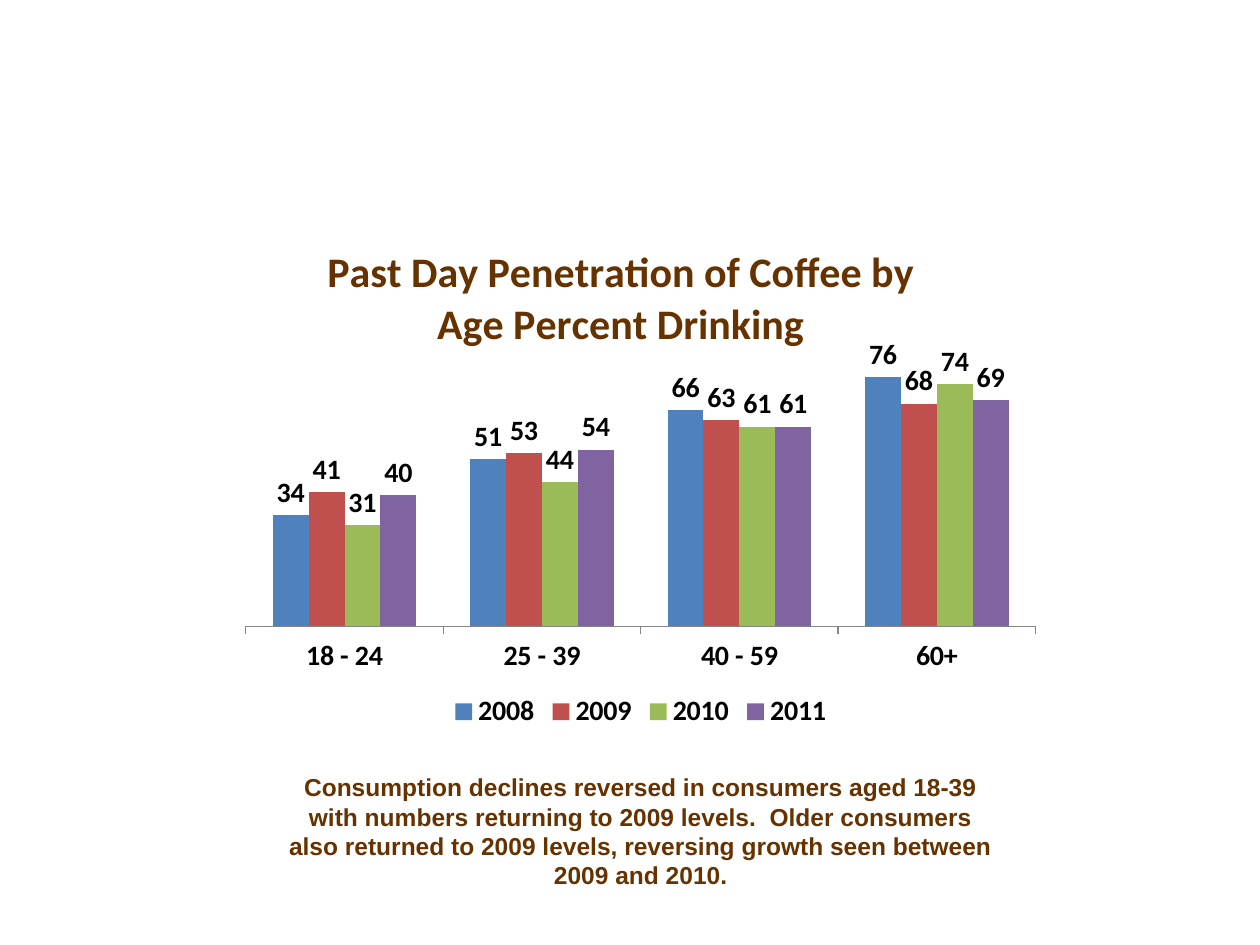
from lxml import etree
from pptx import Presentation
from pptx.chart.data import CategoryChartData
from pptx.dml.color import RGBColor
from pptx.enum import chart as chart_enum, text as text_enum
from pptx.oxml import ns
from pptx.util import Inches, Pt

COLORS = {
    "brown": "663300",
    "black": "000000",
    "axis": "868686",
    "2008": "4F81BD",
    "2009": "C0504D",
    "2010": "9BBB59",
    "2011": "8064A2",
}
AGE_GROUPS = ["18 - 24", "25 - 39", "40 - 59", "60+"]
PERCENT_DRINKING = {
    "2008": [34, 51, 66, 76],
    "2009": [41, 53, 63, 68],
    "2010": [31, 44, 61, 74],
    "2011": [40, 54, 61, 69],
}
TITLE = "Past Day Penetration of Coffee by Age Percent Drinking"
COMMENT = (
    "Consumption declines reversed in consumers aged 18-39 with numbers "
    "returning to 2009 levels.  Older consumers also returned to 2009 levels, "
    "reversing growth seen between 2009 and 2010."
)


def color(name):
    return RGBColor.from_string(COLORS[name])


def format_font(font, size, name="Calibri", color_name="black", bold=True):
    font.name = name
    font.size = Pt(size)
    font.bold = bold
    font.color.rgb = color(color_name)


def write_text(frame, text, align=text_enum.PP_ALIGN.CENTER, **font_format):
    paragraph = frame.paragraphs[0]
    paragraph.alignment = align
    run = paragraph.add_run()
    run.text = text
    format_font(run.font, **font_format)


def set_layout(element, successors, **settings):
    """Place a chart part by fractions of the chart's size."""
    for old in element.findall(ns.qn("c:layout")):
        element.remove(old)
    layout = etree.Element(ns.qn("c:layout"))
    manual = etree.SubElement(layout, ns.qn("c:manualLayout"))
    for tag, value in settings.items():
        etree.SubElement(manual, ns.qn(f"c:{tag}")).set("val", str(value))
    element.insert_element_before(layout, *successors)


def add_title(chart):
    chart.has_title = True
    write_text(chart.chart_title.text_frame, TITLE, size=24, color_name="brown")
    set_layout(
        chart.chart_title._element, ["c:overlay", "c:spPr", "c:txPr"],
        xMode="edge", yMode="edge", x=0.11, y=0.03,
    )


def format_axes(chart):
    category_axis = chart.category_axis
    category_axis.major_tick_mark = chart_enum.XL_TICK_MARK.OUTSIDE
    category_axis.format.line.color.rgb = color("axis")
    format_font(category_axis.tick_labels.font, size=16)
    value_axis = chart.value_axis
    value_axis.minimum_scale = 0
    value_axis.maximum_scale = 80
    value_axis.has_major_gridlines = False
    value_axis.visible = False


def format_columns(plot):
    plot.gap_width = 150
    plot.overlap = 0
    plot.vary_by_categories = False
    for series in plot.series:
        series.format.fill.solid()
        series.format.fill.fore_color.rgb = color(series.name)
        labels = series.data_labels
        labels.show_value = True
        labels.position = chart_enum.XL_LABEL_POSITION.OUTSIDE_END
        format_font(labels.font, size=16)


def add_column_chart(slide, left, top, width, height):
    data = CategoryChartData()
    data.categories = AGE_GROUPS
    for year, values in PERCENT_DRINKING.items():
        data.add_series(year, values)
    chart = slide.shapes.add_chart(
        chart_enum.XL_CHART_TYPE.COLUMN_CLUSTERED,
        Inches(left), Inches(top), Inches(width), Inches(height), data,
    ).chart
    format_font(chart.font, size=10, bold=False)
    add_title(chart)
    format_axes(chart)
    format_columns(chart.plots[0])
    plot_area = chart.plots[0]._element.getparent()
    set_layout(
        plot_area, ["c:barChart"],
        layoutTarget="inner", xMode="edge", yMode="edge",
        x=0.02, y=0.28, w=0.96, h=0.51,
    )
    chart.has_legend = True
    chart.legend.position = chart_enum.XL_LEGEND_POSITION.BOTTOM
    chart.legend.include_in_layout = False
    format_font(chart.legend.font, size=16)


def add_text(slide, text, left, top, width, height, **text_format):
    box = slide.shapes.add_textbox(
        Inches(left), Inches(top), Inches(width), Inches(height)
    )
    box.text_frame.word_wrap = True
    box.text_frame.auto_size = text_enum.MSO_AUTO_SIZE.SHAPE_TO_FIT_TEXT
    write_text(box.text_frame, text, **text_format)


def main():
    presentation = Presentation()
    presentation.slide_width = Inches(10)
    presentation.slide_height = Inches(7.5)
    slide = presentation.slides.add_slide(presentation.slide_layouts[6])
    add_column_chart(slide, 1.82, 1.75, 6.53, 4.08)
    add_text(slide, COMMENT, 2.17, 6.08, 5.83, 1.04,
             size=14, name="Arial", color_name="brown")
    presentation.save("out.pptx")


if __name__ == "__main__":
    main()
